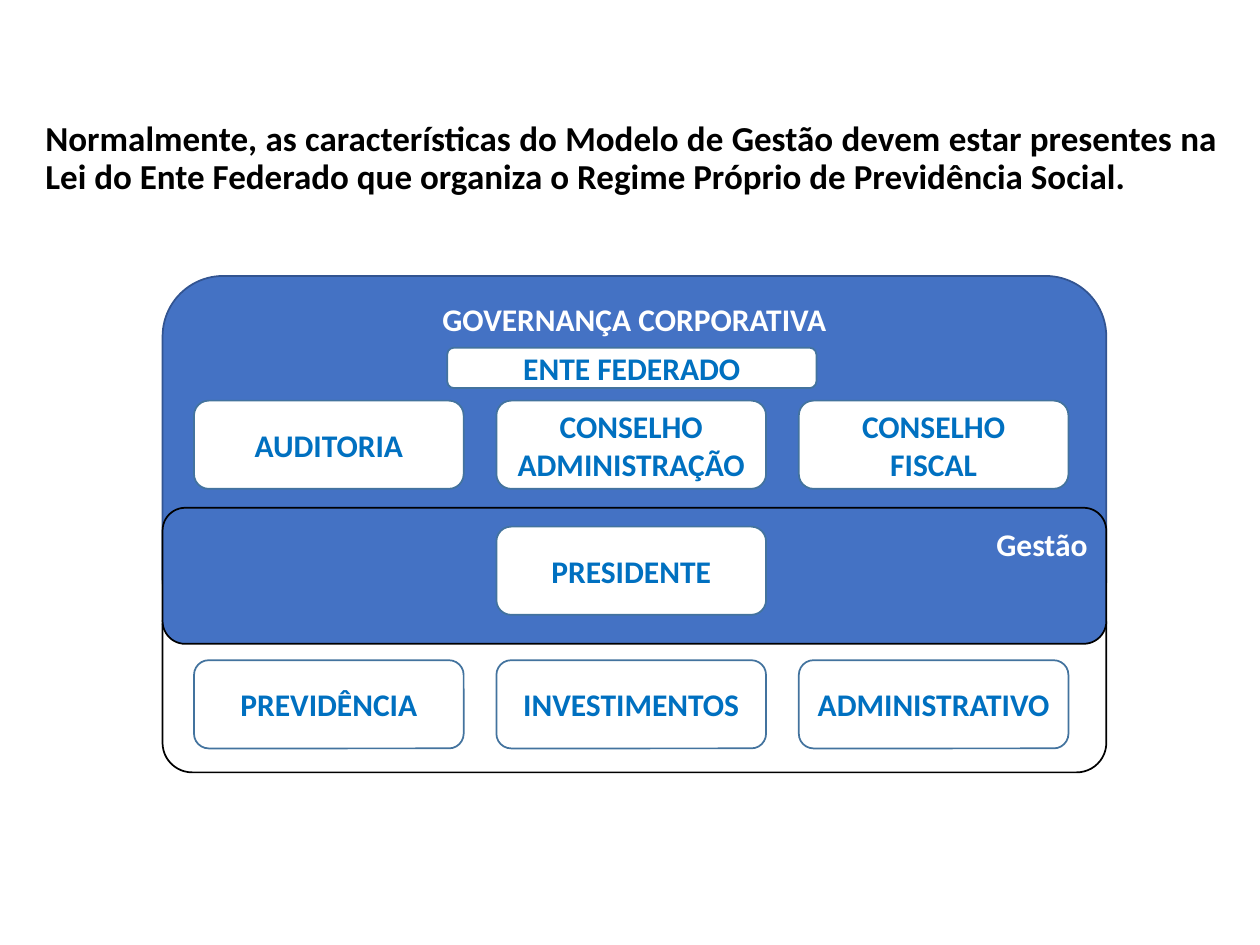
"""Builds the slide on the governance and management model of a pension scheme."""
from pptx import Presentation
from pptx.dml.color import RGBColor
from pptx.enum import shapes, text
from pptx.util import Inches, Pt

BLACK = RGBColor(0x00, 0x00, 0x00)
WHITE = RGBColor(0xFF, 0xFF, 0xFF)
BLUE = RGBColor(0x44, 0x72, 0xC4)
NAVY = RGBColor(0x32, 0x54, 0x91)
STEEL = RGBColor(0x43, 0x73, 0x9E)
AZURE = RGBColor(0x00, 0x70, 0xC0)


def write(frame, words, size, color, align):
    frame.text = words
    frame.word_wrap = True
    para = frame.paragraphs[0]
    para.alignment = align
    font = para.runs[0].font
    font.name, font.size, font.bold = "Calibri", Pt(size), True
    font.color.rgb = color


def box(left, top, width, height, fill, line, words="", color=AZURE):
    shape = slide.shapes.add_shape(
        shapes.MSO_SHAPE.ROUNDED_RECTANGLE,
        Inches(left), Inches(top), Inches(width), Inches(height))
    shape.shadow.inherit = False
    shape.fill.solid()
    shape.fill.fore_color.rgb = fill
    shape.line.color.rgb = line
    shape.line.width = Pt(1)
    if words:
        write(shape.text_frame, words, 18, color, text.PP_ALIGN.CENTER)
        shape.text_frame.vertical_anchor = text.MSO_ANCHOR.MIDDLE
    return shape


deck = Presentation()
deck.slide_width, deck.slide_height = Inches(10), Inches(7.5)
slide = deck.slides.add_slide(deck.slide_layouts[5])

title = slide.shapes.title
title.left, title.top = Inches(0.26), Inches(0.91)
title.width, title.height = Inches(9.5), Inches(1.77)
write(title.text_frame,
      "Normalmente, as características do Modelo de Gestão devem estar presentes "
      "na Lei do Ente Federado que organiza o Regime Próprio de Previdência Social.",
      20, BLACK, text.PP_ALIGN.JUSTIFY)
title.text_frame.vertical_anchor = text.MSO_ANCHOR.TOP
title.text_frame.auto_size = text.MSO_AUTO_SIZE.NONE
title.text_frame.paragraphs[0].line_spacing = 0.9

left, width = 1.29, 7.49
box(left, 4.72, width, 1.41, WHITE, BLACK)
board = box(left, 2.19, width, 2.88, BLUE, NAVY, "GOVERNANÇA CORPORATIVA", WHITE)
board.text_frame.vertical_anchor = text.MSO_ANCHOR.TOP
box(left, 4.03, width, 1.08, BLUE, BLACK)
box(3.55, 2.76, 2.93, 0.32, WHITE, STEEL, "ENTE FEDERADO")

rows = [
    (3.18, ["AUDITORIA", "CONSELHO ADMINISTRAÇÃO", "CONSELHO FISCAL"]),
    (4.18, ["", "PRESIDENTE", ""]),
    (5.24, ["PREVIDÊNCIA", "INVESTIMENTOS", "ADMINISTRATIVO"]),
]
for top, names in rows:
    for col, name in enumerate(names):
        if name:
            box(1.54 + 2.4 * col, top, 2.14, 0.7, WHITE, STEEL, name)

label = slide.shapes.add_textbox(Inches(7.81), Inches(4.12), Inches(0.94), Inches(0.4))
write(label.text_frame, "Gestão", 18, WHITE, text.PP_ALIGN.LEFT)

deck.save("out.pptx")
